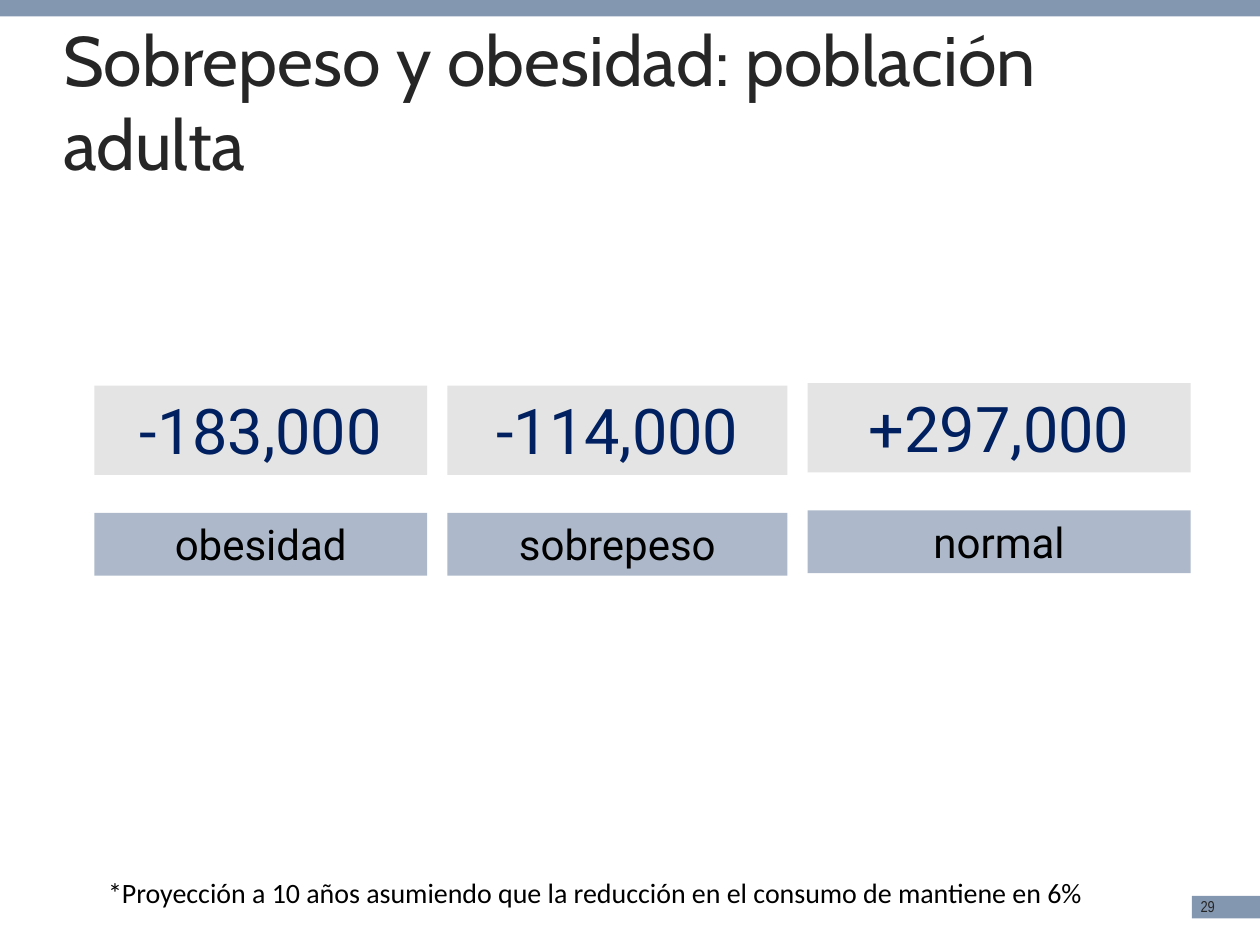
from dataclasses import dataclass

from pptx import Presentation
from pptx.dml.color import RGBColor
from pptx.enum.shapes import MSO_SHAPE
from pptx.enum.text import MSO_ANCHOR, MSO_AUTO_SIZE, PP_ALIGN
from pptx.util import Inches, Pt

RECT = MSO_SHAPE.RECTANGLE
TOP, MIDDLE = MSO_ANCHOR.TOP, MSO_ANCHOR.MIDDLE
LEFT, CENTER = PP_ALIGN.LEFT, PP_ALIGN.CENTER
FIXED = MSO_AUTO_SIZE.NONE


@dataclass(frozen=True)
class Style:
    font: str
    size: int
    color: str


@dataclass(frozen=True)
class Theme:
    bar: str = "8497B0"
    light: str = "E4E4E4"
    blue: str = "ADB9CA"
    title: Style = Style("Cabin", 40, "262626")
    value: Style = Style("Roboto", 36, "002060")
    label: Style = Style("Roboto", 24, "000000")
    note: Style = Style("Calibri", 16, "000000")
    page: Style = Style("Arial Narrow", 9, "262626")


THEME = Theme()


def set_text(shape, text, style, align=LEFT, anchor=TOP, wrap=True):
    frame = shape.text_frame
    frame.text = text
    frame.word_wrap = wrap
    frame.auto_size = FIXED
    frame.vertical_anchor = anchor
    para = frame.paragraphs[0]
    para.alignment = align
    font = para.runs[0].font
    font.name = style.font
    font.size = Pt(style.size)
    font.color.rgb = RGBColor.from_string(style.color)


def add_box(slide, area, fill):
    box = slide.shapes.add_shape(RECT, *map(Inches, area))
    box.shadow.inherit = False
    box.fill.solid()
    box.fill.fore_color.rgb = RGBColor.from_string(fill)
    box.line.fill.background()
    return box


def add_note(slide, area, text, style):
    note = slide.shapes.add_textbox(*map(Inches, area))
    set_text(note, text, style, wrap=False)


def add_title(slide, area, text):
    title = slide.shapes.title
    title.left, title.top, title.width, title.height = map(Inches, area)
    set_text(title, text, THEME.title, anchor=MIDDLE)


def add_group(slide, left, top, width, value, label):
    box = add_box(slide, (left, top, width, 0.71), THEME.light)
    set_text(box, value, THEME.value, CENTER)
    box = add_box(slide, (left, top + 1.01, width, 0.5), THEME.blue)
    set_text(box, label, THEME.label, CENTER)


def main():
    deck = Presentation()
    deck.slide_width, deck.slide_height = Inches(10), Inches(7.5)
    slide = deck.slides.add_slide(deck.slide_layouts[5])

    add_box(slide, (9.46, 7.11, 0.54, 0.18), THEME.bar)
    add_note(slide, (9.43, 7.07, 0.39, 0.25), "29", THEME.page)
    add_box(slide, (0, -0.02, 10, 0.15), THEME.bar)
    add_title(slide, (0.4, 0.41, 9, 0.77),
              "Sobrepeso y obesidad: población adulta")

    groups = (
        (0.75, 3.06, 2.64, "-183,000", "obesidad"),
        (3.55, 3.06, 2.7, "-114,000", "sobrepeso"),
        (6.41, 3.04, 3.04, "+297,000", "normal"),
    )
    for group in groups:
        add_group(slide, *group)

    add_note(slide, (0.76, 6.9, 8.03, 0.37),
             "*Proyección a 10 años asumiendo que la reducción "
             "en el consumo de mantiene en 6%", THEME.note)
    deck.save("out.pptx")


if __name__ == "__main__":
    main()
